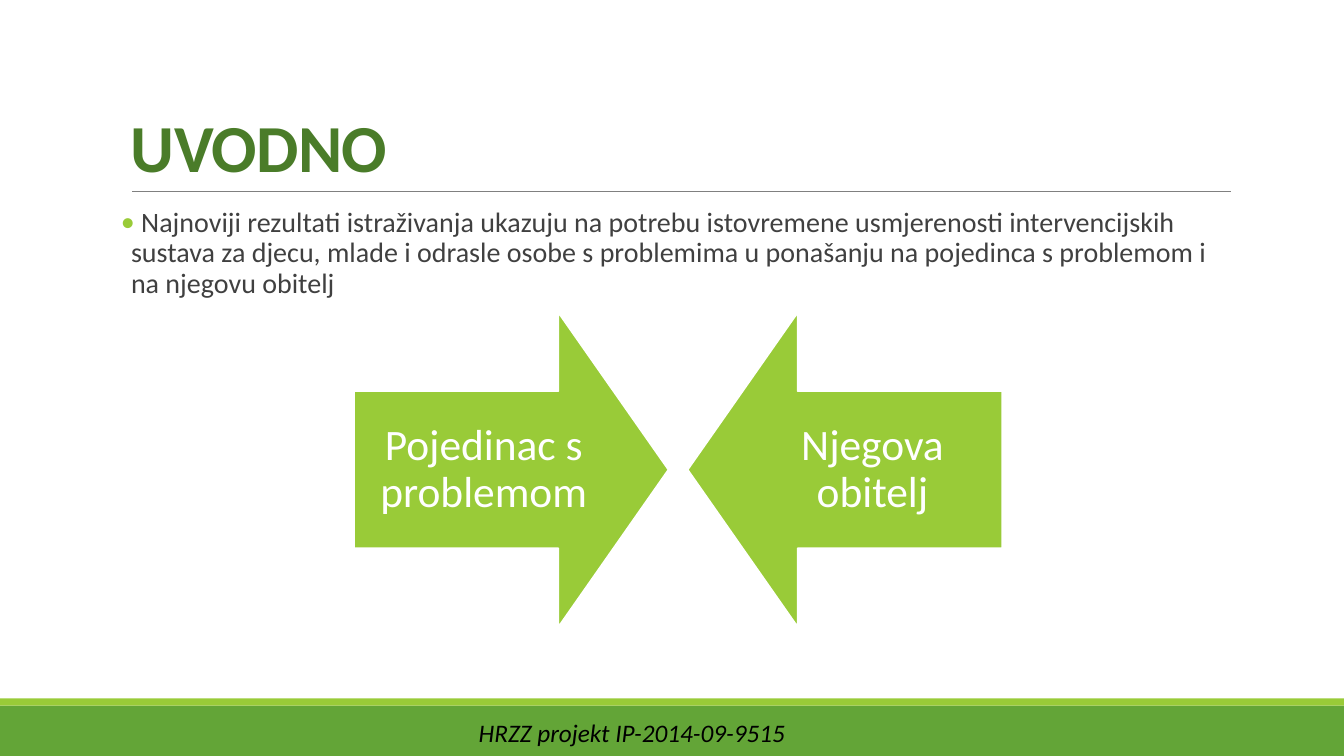
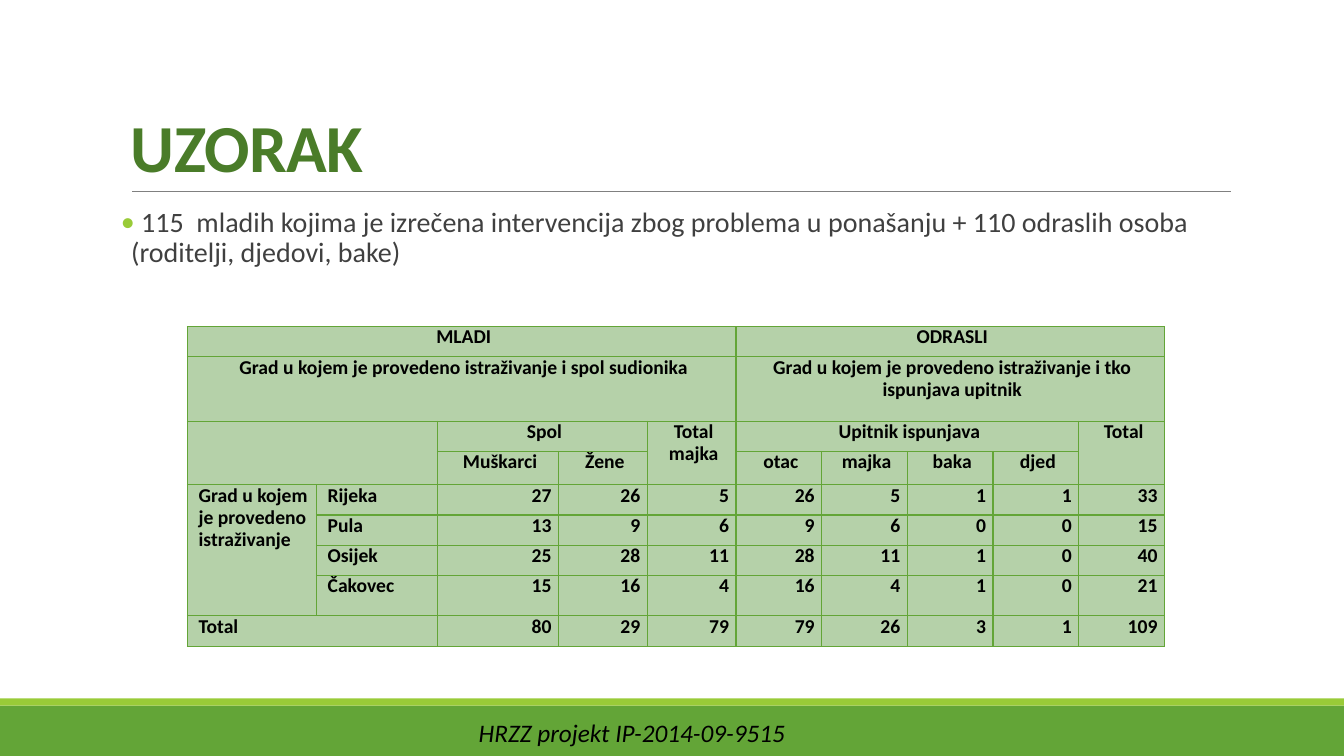
from lxml.etree import SubElement
from pptx import Presentation
from pptx.dml.color import RGBColor
from pptx.enum.shapes import MSO_CONNECTOR, MSO_SHAPE
from pptx.enum.text import MSO_ANCHOR, PP_ALIGN
from pptx.oxml import parse_xml
from pptx.oxml.ns import nsdecls, qn
from pptx.util import Inches, Pt

FONT = "Calibri"
GREEN = "63A537"
LIME = "99CB38"
TITLE_GREEN = "4A7C29"
CELL_GREEN = "B5D1A9"
TEXT_GREY = "404040"
RULE_GREY = "808080"
WHITE = "FFFFFF"
BLACK = "000000"

SLIDE_WIDTH, SLIDE_HEIGHT = 13.33, 7.5
FOOTER = "HRZZ projekt IP-2014-09-9515"

INTRO_TITLE = "UVODNO"
INTRO_BULLET = (
    " Najnoviji rezultati istraživanja ukazuju na potrebu istovremene usmjerenosti "
    "intervencijskih sustava za djecu, mlade i odrasle osobe s problemima u ponašanju "
    "na pojedinca s problemom i na njegovu obitelj"
)
ARROWS = [
    ("Pojedinac s problemom", MSO_SHAPE.RIGHT_ARROW, 3.51),
    ("Njegova obitelj", MSO_SHAPE.LEFT_ARROW, 6.82),
]
ARROW_TOP, ARROW_SIZE = 3.1, 3.12

SAMPLE_TITLE = "UZORAK"
SAMPLE_BULLET = (
    " 115  mladih kojima je izrečena intervencija zbog problema u ponašanju "
    "+ 110 odraslih osoba (roditelji, djedovi, bake)"
)
TABLE_LEFT, TABLE_TOP = 1.86, 3.24
COLUMN_WIDTHS = [1.28, 1.2, 1.2, 0.88, 0.88] + [0.85] * 5
ROW_HEIGHTS = [0.3, 0.64, 0.3, 0.33, 0.3, 0.3, 0.3, 0.4, 0.3]
HEADER_ROWS = 4
LABEL_COLUMNS = 2
HEADINGS = {  # (row, column): text
    (0, 0): "MLADI",
    (0, 5): "ODRASLI",
    (1, 0): "Grad u kojem je provedeno istraživanje i spol sudionika",
    (1, 5): "Grad u kojem je provedeno istraživanje i tko ispunjava upitnik",
    (2, 2): "Spol",
    (2, 4): "Total\nmajka",
    (2, 5): "Upitnik ispunjava",
    (2, 9): "Total",
    (3, 2): "Muškarci",
    (3, 3): "Žene",
    (3, 5): "otac",
    (3, 6): "majka",
    (3, 7): "baka",
    (3, 8): "djed",
    (4, 0): "Grad u kojem je provedeno istraživanje",
    (4, 1): "Rijeka",
    (5, 1): "Pula",
    (6, 1): "Osijek",
    (7, 1): "Čakovec",
    (8, 0): "Total",
}
COUNTS = [
    (27, 26, 5, 26, 5, 1, 1, 33),
    (13, 9, 6, 9, 6, 0, 0, 15),
    (25, 28, 11, 28, 11, 1, 0, 40),
    (15, 16, 4, 16, 4, 1, 0, 21),
    (80, 29, 79, 79, 26, 3, 1, 109),
]
MERGES = [  # first cell, last cell
    ((0, 0), (0, 4)),
    ((0, 5), (0, 9)),
    ((1, 0), (1, 4)),
    ((1, 5), (1, 9)),
    ((2, 0), (3, 1)),
    ((2, 2), (2, 3)),
    ((2, 4), (3, 4)),
    ((2, 5), (2, 8)),
    ((2, 9), (3, 9)),
    ((4, 0), (7, 0)),
    ((8, 0), (8, 1)),
]


def rgb(value):
    return RGBColor.from_string(value)


def add_bullet(paragraph, color):
    properties = paragraph._p.get_or_add_pPr()
    bullet_color = SubElement(properties, qn("a:buClr"))
    SubElement(bullet_color, qn("a:srgbClr"), val=color)
    SubElement(properties, qn("a:buFont"), typeface=FONT)
    SubElement(properties, qn("a:buChar"), char="•")


def write_text(frame, text, *, size, color, bold=False, italic=False,
               align=PP_ALIGN.LEFT, line_spacing=1.0, before=0, after=0,
               margin=0, indent=0, tracking=None, bullet_color=None):
    """Fill a text frame, one paragraph per line of text."""
    for number, line in enumerate(text.split("\n")):
        paragraph = frame.add_paragraph() if number else frame.paragraphs[0]
        paragraph.alignment = align
        paragraph.line_spacing = line_spacing
        paragraph.space_before = Pt(before)
        paragraph.space_after = Pt(after)
        properties = paragraph._p.get_or_add_pPr()
        properties.set("marL", str(Inches(margin)))
        properties.set("indent", str(Inches(indent)))
        if bullet_color:
            add_bullet(paragraph, bullet_color)
        run = paragraph.add_run()
        run.text = line
        font = run.font
        font.name, font.size = FONT, Pt(size)
        font.bold, font.italic = bold, italic
        font.color.rgb = rgb(color)
        if tracking is not None:
            run._r.get_or_add_rPr().set("spc", str(round(tracking * 100)))


def set_insets(frame, horizontal, vertical):
    frame.margin_left = frame.margin_right = Inches(horizontal)
    frame.margin_top = frame.margin_bottom = Inches(vertical)


def add_text_box(slide, box, text, *, anchor=MSO_ANCHOR.TOP, inset=0.1, **text_format):
    frame = slide.shapes.add_textbox(*map(Inches, box)).text_frame
    frame.word_wrap = True
    frame.vertical_anchor = anchor
    set_insets(frame, inset, 0.05)
    write_text(frame, text, **text_format)


def add_filled_shape(slide, kind, box, fill):
    shape = slide.shapes.add_shape(kind, *map(Inches, box))
    shape.shadow.inherit = False
    shape.fill.solid()
    shape.fill.fore_color.rgb = rgb(fill)
    shape.line.fill.background()
    return shape


def add_rule(slide, left, right, top):
    rule = slide.shapes.add_connector(
        MSO_CONNECTOR.STRAIGHT, Inches(left), Inches(top), Inches(right), Inches(top))
    rule.line.color.rgb = rgb(RULE_GREY)
    rule.line.width = Pt(0.5)
    SubElement(rule._element.spPr, qn("a:effectLst"))


def add_base_slide(presentation, title, bullet):
    """Add a slide with the shared bands, rule and footer, its title and its bullet."""
    slide = presentation.slides.add_slide(presentation.slide_layouts[6])
    for top, height, fill in ((7, 0.5, GREEN), (6.93, 0.07, LIME)):
        add_filled_shape(slide, MSO_SHAPE.RECTANGLE, (0, top, SLIDE_WIDTH, height), fill)
    add_rule(slide, 1.31, 12.21, 1.9)
    add_text_box(slide, (1.2, 0.31, 11, 1.59), title, anchor=MSO_ANCHOR.BOTTOM,
                 size=48, color=TITLE_GREEN, bold=True, line_spacing=0.85, tracking=-0.5)
    add_text_box(slide, (1.2, 2.02, 11, 1.1), bullet, inset=0, size=20, color=TEXT_GREY,
                 line_spacing=0.9, before=12, after=2, margin=0.1, indent=-0.1,
                 bullet_color=LIME)
    add_text_box(slide, (4.65, 7.07, 6.67, 0.4), FOOTER,
                 size=18, color=BLACK, italic=True)
    return slide


def add_arrow(slide, text, kind, left):
    arrow = add_filled_shape(slide, kind, (left, ARROW_TOP, ARROW_SIZE, ARROW_SIZE), LIME)
    arrow.adjustments[0], arrow.adjustments[1] = 0.5, 0.35
    arrow.line.color.rgb = rgb(WHITE)
    arrow.line.width = Pt(1.25)
    frame = arrow.text_frame
    frame.word_wrap = True
    frame.vertical_anchor = MSO_ANCHOR.MIDDLE
    set_insets(frame, 0.24, 0.24)
    write_text(frame, text, size=31, color=WHITE, align=PP_ALIGN.CENTER, line_spacing=0.9)


def set_borders(cell, color, width):
    properties = cell._tc.get_or_add_tcPr()
    for position, side in enumerate(("lnL", "lnR", "lnT", "lnB")):
        properties.insert(position, parse_xml(
            f'<a:{side} {nsdecls("a")} w="{Pt(width)}"><a:solidFill>'
            f'<a:srgbClr val="{color}"/></a:solidFill></a:{side}>'))


def cell_content(row, column):
    """Return the text and alignment of a table cell."""
    if row >= HEADER_ROWS and column >= LABEL_COLUMNS:
        return str(COUNTS[row - HEADER_ROWS][column - LABEL_COLUMNS]), PP_ALIGN.RIGHT
    align = PP_ALIGN.CENTER if row < HEADER_ROWS else PP_ALIGN.LEFT
    return HEADINGS.get((row, column), ""), align


def add_sample_table(slide):
    table = slide.shapes.add_table(
        len(ROW_HEIGHTS), len(COLUMN_WIDTHS), Inches(TABLE_LEFT), Inches(TABLE_TOP),
        Inches(sum(COLUMN_WIDTHS)), Inches(sum(ROW_HEIGHTS))).table
    for column, width in zip(table.columns, COLUMN_WIDTHS):
        column.width = Inches(width)
    for row, height in zip(table.rows, ROW_HEIGHTS):
        row.height = Inches(height)
    for row in range(len(ROW_HEIGHTS)):
        for column in range(len(COLUMN_WIDTHS)):
            cell = table.cell(row, column)
            text, align = cell_content(row, column)
            set_insets(cell, 0.07, 0)
            write_text(cell.text_frame, text, size=14, color=BLACK, bold=True,
                       align=align, line_spacing=Pt(16), margin=0.04)
            cell.fill.solid()
            cell.fill.fore_color.rgb = rgb(CELL_GREEN)
            set_borders(cell, GREEN, 1)
    for first, last in MERGES:
        table.cell(*first).merge(table.cell(*last))


def main():
    presentation = Presentation()
    presentation.slide_width = Inches(SLIDE_WIDTH)
    presentation.slide_height = Inches(SLIDE_HEIGHT)

    intro = add_base_slide(presentation, INTRO_TITLE, INTRO_BULLET)
    for text, kind, left in ARROWS:
        add_arrow(intro, text, kind, left)

    sample = add_base_slide(presentation, SAMPLE_TITLE, SAMPLE_BULLET)
    add_sample_table(sample)

    presentation.save("out.pptx")


if __name__ == "__main__":
    main()
